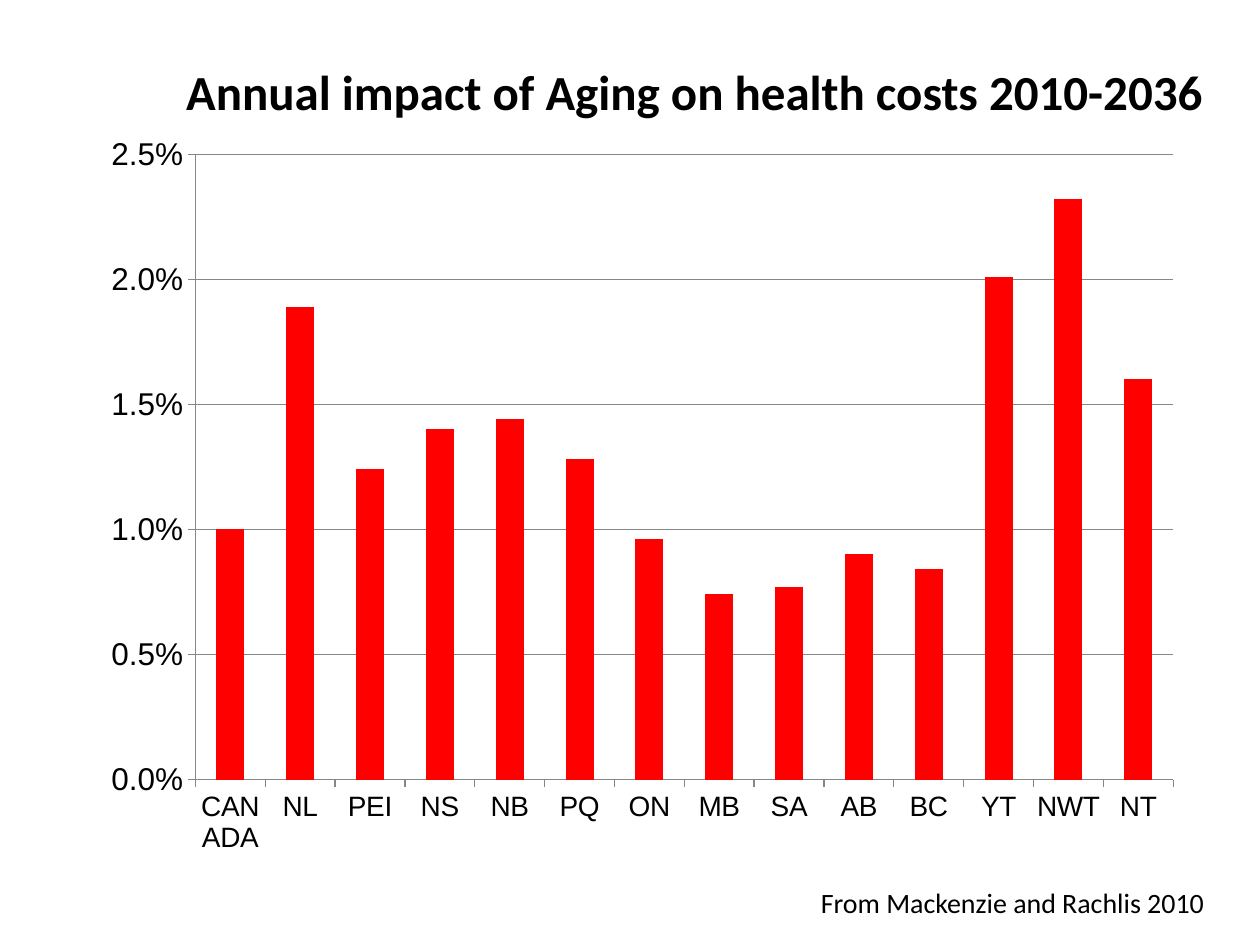
import pptx
import pptx.chart.data
import pptx.dml.color
import pptx.enum.chart
import pptx.enum.text
import pptx.oxml
import pptx.oxml.ns
import pptx.util
from pptx.util import Cm

TITLE = "Annual impact of Aging on health costs 2010-2036"
SOURCE = "From Mackenzie and Rachlis 2010"
IMPACT = {
    "CANADA": 0.01, "NL": 0.0189, "PEI": 0.0124, "NS": 0.014, "NB": 0.0144,
    "PQ": 0.0128, "ON": 0.0096, "MB": 0.0074, "SA": 0.0077, "AB": 0.009,
    "BC": 0.0084, "YT": 0.0201, "NWT": 0.0232, "NT": 0.016,
}
COLORS = {"text": "000000", "bar": "FF0000", "line": "878787"}
PLOT = {"x": 0.1, "y": 0.04, "w": 0.88, "h": 0.84}


def rgb(name):
    return pptx.dml.color.RGBColor.from_string(COLORS[name])


def style_font(font, size, name, bold=False):
    font.size = pptx.util.Pt(size)
    font.name = name
    font.bold = bold
    font.color.rgb = rgb("text")


def place(sp, left, top, width, height):
    sp.left, sp.top, sp.width, sp.height = Cm(left), Cm(top), Cm(width), Cm(height)


def write(sp, text, size, bold=False, wrap=True):
    tf = sp.text_frame
    tf.text = text
    tf.word_wrap = wrap
    tf.auto_size = pptx.enum.text.MSO_AUTO_SIZE.SHAPE_TO_FIT_TEXT
    tf.vertical_anchor = pptx.enum.text.MSO_ANCHOR.TOP
    p = tf.paragraphs[0]
    p.alignment = pptx.enum.text.PP_ALIGN.LEFT
    style_font(p.runs[0].font, size, "Calibri", bold)


def style_axis(axis, size):
    axis.major_tick_mark = pptx.enum.chart.XL_TICK_MARK.OUTSIDE
    axis.minor_tick_mark = pptx.enum.chart.XL_TICK_MARK.NONE
    axis.format.line.color.rgb = rgb("line")
    axis.format.line.width = pptx.util.Pt(0.75)
    style_font(axis.tick_labels.font, size, "Arial")


def set_plot_layout(chart):
    area = chart._chartSpace.chart.plotArea
    for old in area.findall(pptx.oxml.ns.qn("c:layout")):
        area.remove(old)
    modes = "".join(f'<c:{k}Mode val="edge"/>' for k in "xy")
    sizes = "".join(f'<c:{k} val="{v}"/>' for k, v in PLOT.items())
    area.insert(0, pptx.oxml.parse_xml(
        f'<c:layout {pptx.oxml.ns.nsdecls("c")}><c:manualLayout>'
        f'<c:layoutTarget val="inner"/>{modes}{sizes}</c:manualLayout></c:layout>'))


def add_impact_chart(s):
    data = pptx.chart.data.CategoryChartData(number_format="0.0%")
    data.categories = list(IMPACT)
    data.add_series("Series 1", list(IMPACT.values()))
    chart = s.shapes.add_chart(
        pptx.enum.chart.XL_CHART_TYPE.COLUMN_CLUSTERED,
        Cm(1.7), Cm(2.51), Cm(22.4), Cm(15.01), data).chart
    chart.has_legend = False
    chart.has_title = False
    style_font(chart.font, 10, "Arial")
    plot = chart.plots[0]
    plot.vary_by_categories = False
    plot.gap_width = 150
    fill = plot.series[0].format.fill
    fill.solid()
    fill.fore_color.rgb = rgb("bar")
    style_axis(chart.category_axis, 16)
    axis = chart.value_axis
    style_axis(axis, 18)
    axis.minimum_scale, axis.maximum_scale, axis.major_unit = 0, 0.025, 0.005
    axis.tick_labels.number_format = "0.0%"
    axis.tick_labels.number_format_is_linked = False
    axis.has_major_gridlines = True
    axis.major_gridlines.format.line.color.rgb = rgb("line")
    axis.major_gridlines.format.line.width = pptx.util.Pt(0.75)
    set_plot_layout(chart)


def main():
    """Build the slide on the health cost impact of aging."""
    prs = pptx.Presentation()
    prs.slide_width, prs.slide_height = Cm(25.4), Cm(19.05)
    s = prs.slides.add_slide(prs.slide_layouts[5])
    add_impact_chart(s)
    source = s.shapes.add_textbox(Cm(16.3), Cm(17.73), Cm(8.5), Cm(0.94))
    write(source, SOURCE, 16, wrap=False)
    place(s.shapes.title, 3.5, 1.12, 21.9, 1.45)
    write(s.shapes.title, TITLE, 28, bold=True)
    prs.save("out.pptx")


if __name__ == "__main__":
    main()
